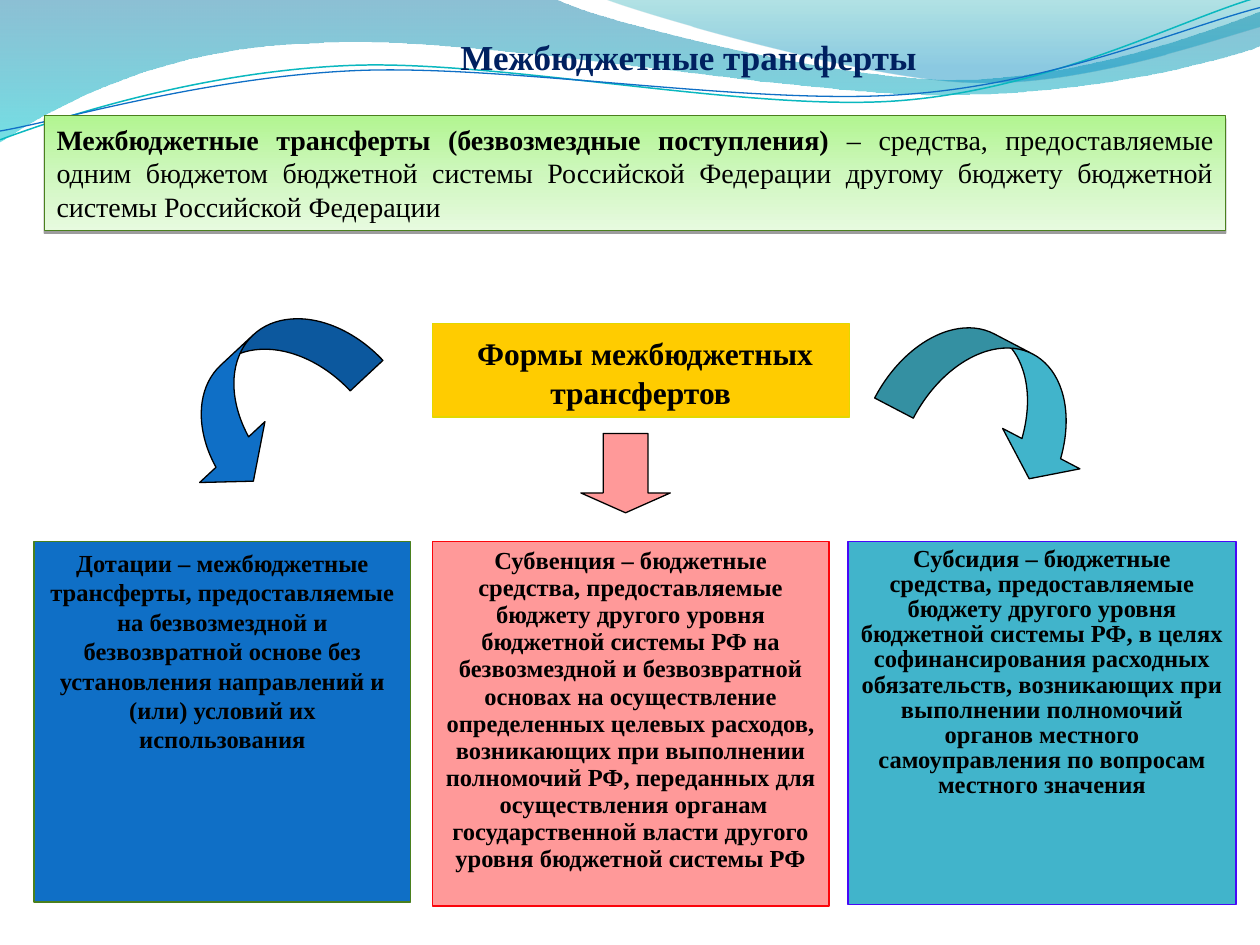
from math import cos, radians, sin

from lxml import etree
from pptx import Presentation
from pptx.dml.color import RGBColor
from pptx.enum.shapes import MSO_SHAPE
from pptx.enum.text import MSO_ANCHOR, PP_ALIGN
from pptx.oxml.ns import qn
from pptx.util import Inches, Pt

RECT = MSO_SHAPE.RECTANGLE
CENTER, JUSTIFY = PP_ALIGN.CENTER, PP_ALIGN.JUSTIFY
TOP, MIDDLE = MSO_ANCHOR.TOP, MSO_ANCHOR.MIDDLE


def color(hex_string):
    return RGBColor.from_string(hex_string)


def add_node(parent, tag, **attributes):
    return etree.SubElement(parent, qn(tag), {k: str(v) for k, v in attributes.items()})


deck = Presentation()
deck.slide_width, deck.slide_height = Inches(10), Inches(7.5)
page = deck.slides.add_slide(deck.slide_layouts[6])

# Each wave: points, gradient stops, line, and rotation with its centre.
# Two numbers draw a line to a point, six draw a Bézier curve.
waves = [
    ([(0, 0), (4.4, -0.01), (4.76, 0.17, 6.64, 0.63, 7.58, 0.63),
      (8.53, 0.63, 9.58, 0.26, 10, 0.09), (10.01, 0.36),
      (9.83, 0.44, 8.7, 0.76, 7.46, 0.75), (6.22, 0.75, 3.82, 0.28, 2.57, 0.34),
      (1.29, 0.36, 0.46, 0.83, -0.01, 1.13), (0, 0)],
     [(0, "0074A1", 45), (100, "00C6CF", 55)], None, 0, (0, 0)),
    ([(4.79, -0.01), (5.09, 0.11, 6.82, 0.62, 7.69, 0.65),
      (8.56, 0.69, 9.61, 0.32, 10, 0.21), (10, 0), (4.79, -0.01)],
     [(0, "00A1A9", 30), (80, "008BBF", 45)], None, 0, (0, 0)),
    ([(0, 1.11), (0.48, 0.93, 1.58, 0.57, 2.77, 0.52), (3.95, 0.47, 5.93, 0.89, 7.13, 0.8),
      (8.33, 0.71, 9.38, 0.15, 9.98, -0.02)], None, ("0AB8BF", 0.85), -2.7, (4.99, 0.58)),
    ([(0, 1.04), (0.47, 0.96, 1.64, 0.61, 2.83, 0.56), (4.03, 0.51, 5.97, 0.84, 7.17, 0.75),
      (8.36, 0.67, 9.41, 0.21, 10, 0.06)], None, ("0F6FC6", 0.75), -2.7, (4.99, 0.59)),
]
gradients = []
for segments, stops, stroke, turn, (mid_x, mid_y) in waves:
    cosine, sine = cos(radians(turn)), sin(radians(turn))
    curves = []
    for segment in segments:
        offsets = [(x - mid_x, y - mid_y) for x, y in zip(segment[::2], segment[1::2])]
        curves.append([(Inches(mid_x + x * cosine + y * sine),
                        Inches(mid_y + y * cosine - x * sine)) for x, y in offsets])
    builder = page.shapes.build_freeform(*curves[0][0])
    builder.add_line_segments([curve[-1] for curve in curves[1:]], close=stops is not None)
    wave = builder.convert_to_shape()
    for edge, curve in zip(list(wave.element.iter(qn("a:lnTo"))), curves[1:]):
        if len(curve) == 3:
            edge.tag = qn("a:cubicBezTo")
            edge.remove(edge[0])
            for x, y in curve:
                add_node(edge, "a:pt", x=x - wave.left, y=y - wave.top)
    wave.rotation = turn
    wave.shadow.inherit = False
    if stops:
        wave.line.fill.background()
        gradients.append((wave, stops))
    else:
        wave.fill.background()
        wave.line.color.rgb = color(stroke[0])
        wave.line.width = Pt(stroke[1])

# Place, fill, line, line width, alignment, anchor, line spacing, runs (text, size, bold, colour)
boxes = [
    ((1.09, 0.23, 8.75, 0.44), None, None, 0, CENTER, TOP, 1,
     [("Межбюджетные трансферты", 20, True, "002060")]),
    ((0.35, 0.92, 9.38, 0.91), [(0, "B2F591", 100), (50, "CEF7BD", 100), (100, "E7FADF", 100)],
     "4A801E", 0.5, JUSTIFY, TOP, 1,
     [("Межбюджетные трансферты (безвозмездные поступления) ", 16, True, "000000"),
      ("– средства, предоставляемые одним бюджетом бюджетной системы Российской Федерации "
       "другому бюджету бюджетной системы Российской Федерации", 16, False, "000000")]),
    ((3.43, 2.57, 3.31, 0.74), "FFCC00", "E2D700", 0.75, CENTER, MIDDLE, 1,
     [(" ", 20, True, "000000"), ("Формы межбюджетных трансфертов", 18, True, "000000")]),
    ((0.27, 4.3, 2.99, 2.86), "0F6FC6", "4A801E", 0.75, CENTER, TOP, 1,
     [("Дотации – межбюджетные трансферты, предоставляемые на безвозмездной и безвозвратной "
       "основе без установления направлений и (или) условий их использования",
       14, True, "000000")]),
    ((3.43, 4.3, 3.15, 2.89), "FF9999", "FB050B", 0.75, CENTER, TOP, 0.92,
     [("Субвенция – бюджетные средства, предоставляемые бюджету другого уровня бюджетной "
       "системы РФ на безвозмездной и безвозвратной основах на осуществление определенных "
       "целевых расходов, возникающих при выполнении полномочий РФ, переданных для  "
       "осуществления органам государственной власти другого уровня бюджетной системы РФ",
       14, True, "000000")]),
    ((6.73, 4.3, 3.08, 2.88), "41B4CB", "4709F7", 0.75, CENTER, TOP, 0.85,
     [("Субсидия – бюджетные средства, предоставляемые бюджету другого уровня бюджетной "
       "системы РФ, в целях софинансирования расходных обязательств, возникающих при "
       "выполнении полномочий органов местного самоуправления по вопросам местного значения",
       14, True, "000000")]),
]
for place, fill, stroke, width, align, anchor, spacing, runs in boxes:
    place = [Inches(v) for v in place]
    if fill is None:
        box = page.shapes.add_textbox(*place)
    else:
        box = page.shapes.add_shape(RECT, *place)
        box.shadow.inherit = False
        box.line.color.rgb = color(stroke)
        box.line.width = Pt(width)
        if isinstance(fill, str):
            box.fill.solid()
            box.fill.fore_color.rgb = color(fill)
        else:
            gradients.append((box, fill))
            effects = box.element.spPr.find(qn("a:effectLst"))
            shade = add_node(effects, "a:outerShdw", blurRad=0, dist=Pt(1.6),
                             dir=5400000, rotWithShape=0)
            tint = add_node(shade, "a:srgbClr", val="000000")
            add_node(tint, "a:alpha", val=38000)
    frame = box.text_frame
    frame.word_wrap = True
    frame.vertical_anchor = anchor
    para = frame.paragraphs[0]
    para.alignment = align
    para.line_spacing = spacing
    for text, size, bold, ink in runs:
        span = para.add_run()
        span.text = text
        span.font.name = "Times New Roman"
        span.font.size = Pt(size)
        span.font.bold = bold
        span.font.color.rgb = color(ink)

# Vertical gradients, with the opacity of each stop in percent
for shape, stops in gradients:
    shape.fill.gradient()
    gradient = shape.element.spPr.find(qn("a:gradFill"))
    for child in list(gradient):
        gradient.remove(child)
    stop_list = add_node(gradient, "a:gsLst")
    for position, tone, opacity in stops:
        stop = add_node(stop_list, "a:gs", pos=position * 1000)
        tint = add_node(stop, "a:srgbClr", val=tone)
        if opacity < 100:
            add_node(tint, "a:alpha", val=opacity * 1000)
    add_node(gradient, "a:lin", ang=5400000, scaled=0)

arrows = [
    (MSO_SHAPE.CURVED_RIGHT_ARROW, (1.68, 2.27, 0.85, 1.76), 47, (0.417, 0.834, 0.333), "0F6FC6"),
    (MSO_SHAPE.CURVED_LEFT_ARROW, (7.47, 2.3, 0.89, 1.73), 297.6, (0.389, 0.778, 0.288), "41B4CB"),
    (MSO_SHAPE.DOWN_ARROW, (4.61, 3.44, 0.71, 0.63), 0, (0.5, 0.25), "FF9999"),
]
for kind, place, turn, adjustments, fill in arrows:
    arrow = page.shapes.add_shape(kind, *[Inches(v) for v in place])
    arrow.shadow.inherit = False
    arrow.rotation = turn
    for index, value in enumerate(adjustments):
        arrow.adjustments[index] = value
    arrow.fill.solid()
    arrow.fill.fore_color.rgb = color(fill)
    arrow.line.color.rgb = color("000000")
    arrow.line.width = Pt(0.75)

deck.save("out.pptx")
